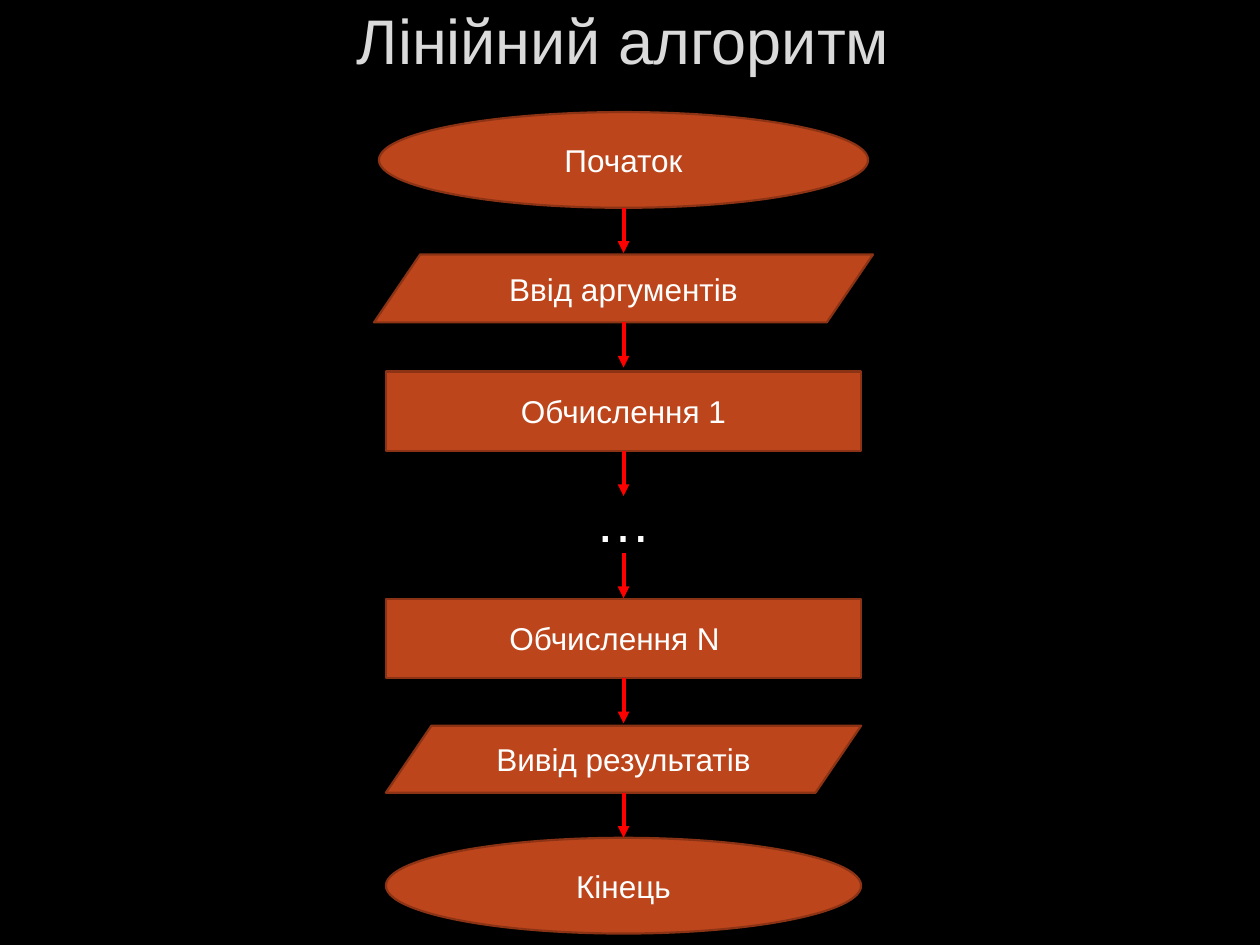
"""Build the flowchart slide of a linear algorithm."""
from dataclasses import dataclass

import lxml.etree
import pptx
import pptx.dml.color
import pptx.enum.shapes
import pptx.enum.text
import pptx.oxml.ns
import pptx.util

Cm = pptx.util.Cm
Pt = pptx.util.Pt
SHAPES = pptx.enum.shapes.MSO_SHAPE
qn = pptx.oxml.ns.qn


@dataclass(frozen=True)
class Theme:
    """Colours, font and sizes of the slide."""
    font: str = "Arial"
    background: str = "000000"
    title: str = "DADADA"
    text: str = "FFFFFF"
    block: str = "BC451B"
    outline: str = "8B3314"
    arrow: str = "FF0000"
    title_size: int = 36
    text_size: int = 18
    dots_size: int = 32


THEME = Theme()
AXIS = 12.57
ARROW_LENGTH = 0.91
BLOCK_WIDTH = 9.58


def rgb(value):
    """Return the colour object of a hex value."""
    return pptx.dml.color.RGBColor.from_string(value)


def write_text(shape, text, size=THEME.text_size, color=THEME.text, right_inset=0.25):
    """Put centred, formatted text into a shape."""
    frame = shape.text_frame
    frame.word_wrap = True
    frame.auto_size = pptx.enum.text.MSO_AUTO_SIZE.NONE
    frame.vertical_anchor = pptx.enum.text.MSO_ANCHOR.MIDDLE
    frame.margin_top = frame.margin_bottom = 0
    frame.margin_right = Cm(right_inset)
    paragraph = frame.paragraphs[0]
    paragraph.alignment = pptx.enum.text.PP_ALIGN.CENTER
    run = paragraph.add_run()
    run.text = text
    run.font.name = THEME.font
    run.font.size = Pt(size)
    run.font.color.rgb = rgb(color)


def add_title(slide, text):
    """Place and format the title placeholder."""
    title = slide.shapes.title
    title.left, title.top = Cm(1.78), Cm(0)
    title.width, title.height = Cm(21.56), Cm(1.57)
    write_text(title, text, size=THEME.title_size, color=THEME.title)


def add_block(slide, kind, text, top, height, width=BLOCK_WIDTH, **text_format):
    """Add a flowchart block centred on the axis."""
    left = Cm(AXIS - width / 2)
    shape = slide.shapes.add_shape(kind, left, Cm(top), Cm(width), Cm(height))
    shape.shadow.inherit = False
    shape.fill.solid()
    shape.fill.fore_color.rgb = rgb(THEME.block)
    shape.line.color.rgb = rgb(THEME.outline)
    shape.line.width = Pt(1.25)
    if kind == SHAPES.PARALLELOGRAM:
        shape.adjustments[0] = 0.68
    write_text(shape, text, **text_format)


def add_dots(slide, top, height):
    """Add the ellipsis that stands for the omitted steps."""
    left = Cm(AXIS - BLOCK_WIDTH / 2)
    box = slide.shapes.add_textbox(left, Cm(top), Cm(BLOCK_WIDTH), Cm(height))
    write_text(box, "…", size=THEME.dots_size)


def add_arrow(slide, top):
    """Add a downward arrow on the axis."""
    arrow = slide.shapes.add_connector(
        pptx.enum.shapes.MSO_CONNECTOR.STRAIGHT,
        Cm(AXIS), Cm(top), Cm(AXIS), Cm(top + ARROW_LENGTH))
    arrow.line.color.rgb = rgb(THEME.arrow)
    arrow.line.width = Pt(2.25)
    lxml.etree.SubElement(arrow.line._get_or_add_ln(), qn("a:tailEnd"), type="triangle")
    lxml.etree.SubElement(arrow._element.spPr, qn("a:effectLst"))


def main():
    """Build and save the presentation."""
    presentation = pptx.Presentation()
    presentation.slide_width, presentation.slide_height = Cm(25.4), Cm(19.05)
    slide = presentation.slides.add_slide(presentation.slide_layouts[5])
    slide.background.fill.solid()
    slide.background.fill.fore_color.rgb = rgb(THEME.background)
    add_title(slide, "Лінійний алгоритм")

    blocks = [
        (SHAPES.OVAL, "Початок", 2.26, 1.93, {"width": 9.86}),
        (SHAPES.PARALLELOGRAM, "Ввід аргументів", 5.13, 1.37, {"width": 10.06}),
        (SHAPES.RECTANGLE, "Обчислення 1", 7.49, 1.6, {}),
        (SHAPES.RECTANGLE, "Обчислення N", 12.07, 1.6, {"right_inset": 0.61}),
        (SHAPES.PARALLELOGRAM, "Вивід результатів", 14.63, 1.35, {}),
        (SHAPES.OVAL, "Кінець", 16.89, 1.93, {}),
    ]
    dots_top, dots_height = 9.81, 1.34
    for kind, text, top, height, options in blocks:
        add_block(slide, kind, text, top, height, **options)
    add_dots(slide, dots_top, dots_height)

    for _, _, top, height, _ in blocks[:-1]:
        add_arrow(slide, top + height)
    add_arrow(slide, dots_top + dots_height)
    presentation.save("out.pptx")


if __name__ == "__main__":
    main()
